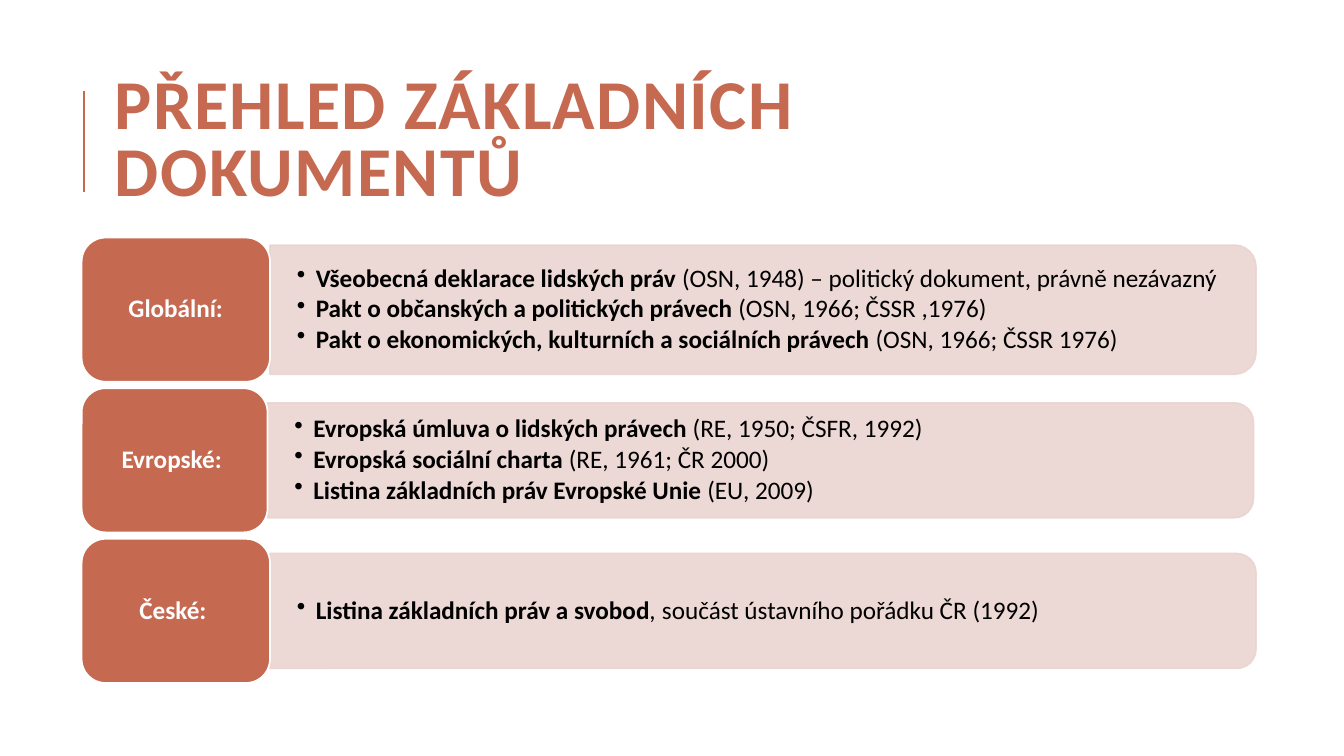
from lxml import etree
from pptx import Presentation
from pptx.dml.color import RGBColor
from pptx.enum.shapes import MSO_CONNECTOR, MSO_SHAPE
from pptx.enum.text import MSO_ANCHOR, PP_ALIGN
from pptx.oxml.ns import qn
from pptx.util import Pt

ROUND, ROUND_TOP = MSO_SHAPE.ROUNDED_RECTANGLE, MSO_SHAPE.ROUND_2_SAME_RECTANGLE
MIDDLE = MSO_ANCHOR.MIDDLE
LEFT, CENTER, JUSTIFY = PP_ALIGN.LEFT, PP_ALIGN.CENTER, PP_ALIGN.JUSTIFY
RUST, PINK, WHITE, BLACK = "C66951", "EAD4D0", "FFFFFF", "000000"


def color(hex_string):
    return RGBColor.from_string(hex_string)


def add_run(p, text, rgb, **formats):
    r = p.add_run()
    r.text = text
    r.font.color.rgb = color(rgb)
    for name, value in {"name": "Calibri", "size": Pt(18), **formats}.items():
        setattr(r.font, name, value)
    return r


prs = Presentation()
prs.slide_width, prs.slide_height = Pt(960), Pt(540)
s = prs.slides.add_slide(prs.slide_layouts[6])

# Title with the vertical rule beside it
rule = s.shapes.add_connector(MSO_CONNECTOR.STRAIGHT, Pt(60), Pt(137), Pt(60), Pt(65))
rule.line.color.rgb = color(RUST)
rule.line.width = Pt(1.5)
etree.SubElement(rule._element.spPr, qn("a:effectLst"))

tf = s.shapes.add_textbox(Pt(75), Pt(83.5), Pt(767.5), Pt(37.5)).text_frame
tf.word_wrap = True
tf.vertical_anchor = MIDDLE
p = tf.paragraphs[0]
p.line_spacing = 0.8
r = add_run(p, "PŘEHLED ZÁKLADNÍCH DOKUMENTŮ", RUST, size=Pt(50), bold=True)
r.font._element.set("spc", "100")

# Rows: label, label width, panel height, alignment, items of (bold, italic, plain)
rows = [
    ("Globální:", 134.6, 92.2, JUSTIFY, [
        ("Všeobecná deklarace lidských práv ", "",
         "(OSN, 1948) – politický dokument, právně nezávazný"),
        ("Pakt o občanských a politických právech ", "", "(OSN, 1966; ČSSR ,1976)"),
        ("Pakt o ekonomických, kulturních a sociálních právech ", "",
         "(OSN, 1966; ČSSR 1976)"),
    ]),
    ("Evropské: ", 132.8, 82, LEFT, [
        ("Evropská úmluva o lidských právech ", "", "(RE, 1950; ČSFR, 1992)"),
        ("Evropská sociální charta ", "", "(RE, 1961; ČR 2000)"),
        ("Listina základních práv Evropské Unie ", "", "(EU, 2009)"),
    ]),
    ("České: ", 134.6, 82, LEFT, [
        ("Listina základních práv a svobod", ", ", "součást ústavního pořádku ČR (1992)"),
    ]),
]
label_left, label_h, panel_w = 58.3, 103, 704.2
first_middle, pitch = 221.2, 107.6

for i, (label, label_w, panel_h, align, items) in enumerate(rows):
    middle = first_middle + i * pitch
    panel_left = label_left + label_w

    # Panel, turned so that its rounded corners are on the right
    panel = s.shapes.add_shape(
        ROUND_TOP, Pt(panel_left + (panel_w - panel_h) / 2), Pt(middle - panel_w / 2),
        Pt(panel_h), Pt(panel_w))
    panel.rotation = 90

    # Label
    tab = s.shapes.add_shape(ROUND, Pt(label_left), Pt(middle - label_h / 2),
                             Pt(label_w), Pt(label_h))
    for sp, fill, line in ((panel, PINK, PINK), (tab, RUST, WHITE)):
        sp.shadow.inherit = False
        sp.fill.solid()
        sp.fill.fore_color.rgb = color(fill)
        sp.line.color.rgb = color(line)
        sp.line.width = Pt(1.25)
    for clr in panel._element.spPr.iter(qn("a:srgbClr")):
        etree.SubElement(clr, qn("a:alpha"), val="90000")
    tf = tab.text_frame
    tf.word_wrap = True
    tf.vertical_anchor = MIDDLE
    p = tf.paragraphs[0]
    p.alignment = CENTER
    p.line_spacing = 0.9
    add_run(p, label, WHITE, bold=True)

    # Bulleted documents
    text_h = panel_h - 8
    tf = s.shapes.add_textbox(Pt(panel_left), Pt(middle - text_h / 2),
                              Pt(700), Pt(text_h)).text_frame
    tf.word_wrap = True
    tf.vertical_anchor = MIDDLE
    tf.margin_left = tf.margin_right = Pt(19.2)
    tf.margin_top = tf.margin_bottom = Pt(9.6)
    for n, (bold, italic, plain) in enumerate(items):
        p = tf.add_paragraph() if n else tf.paragraphs[0]
        pPr = p._p.get_or_add_pPr()
        pPr.set("marL", str(Pt(13.5)))
        pPr.set("indent", str(-Pt(13.5)))
        etree.SubElement(pPr, qn("a:buChar"), char="•")
        p.alignment = align
        p.line_spacing = 0.9
        p.space_after = Pt(2.5)
        add_run(p, bold, BLACK, bold=True)
        if italic:
            add_run(p, italic, BLACK, italic=True)
        add_run(p, plain, BLACK)

prs.save("out.pptx")
